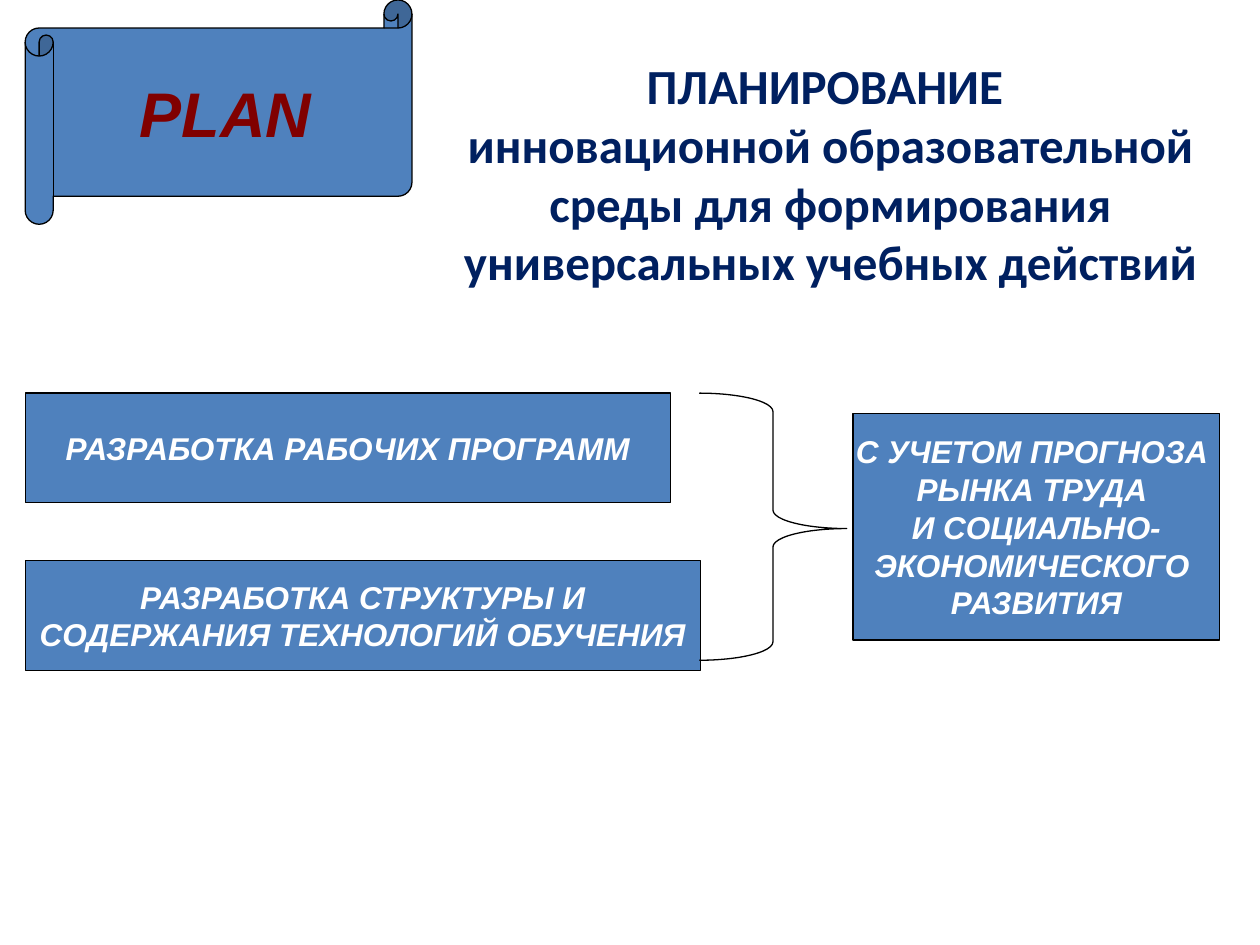
from pptx import Presentation
from pptx.dml.color import RGBColor
from pptx.enum.shapes import MSO_SHAPE as Shape
from pptx.enum.text import MSO_ANCHOR as Anchor, MSO_AUTO_SIZE as AutoSize, PP_ALIGN as Align
from pptx.util import Inches, Pt

WIDTH, HEIGHT = 10, 7.5
LEFT = 0.2
TASK_TOP = 3.12
COLORS = {"fill": "4F81BD", "line": "000000", "title": "002060",
          "plan": "800000", "light": "FFFFFF"}


def color(name):
    return RGBColor.from_string(COLORS[name])


def write(frame, text, size, font_name, color_name, italic=True):
    frame.text = text
    for para in frame.paragraphs:
        para.alignment = Align.CENTER
        for span in para.runs:
            font = span.font
            font.name, font.size = font_name, Pt(size)
            font.bold, font.italic = True, italic
            font.color.rgb = color(color_name)


def add_outline(page, kind, left, top, width, height):
    """Add an unfilled preset shape with a thin black line."""
    shape = page.shapes.add_shape(kind, *map(Inches, (left, top, width, height)))
    shape.shadow.inherit = False
    shape.fill.background()
    shape.line.color.rgb = color("line")
    shape.line.width = Pt(0.75)
    return shape


def add_panel(page, kind, place, text, size=18, color_name="light"):
    panel = add_outline(page, kind, *place)
    panel.fill.solid()
    panel.fill.fore_color.rgb = color("fill")
    frame = panel.text_frame
    frame.word_wrap = False
    frame.vertical_anchor = Anchor.MIDDLE
    write(frame, text, size, "Arial", color_name)


def add_title(page, text):
    title = page.shapes.title
    title.left, title.top = Inches(3.12), Inches(0.39)
    title.width, title.height = Inches(6.56), Inches(1.88)
    frame = title.text_frame
    frame.word_wrap = True
    frame.auto_size = AutoSize.NONE
    frame.vertical_anchor = Anchor.TOP
    frame.margin_left = Inches(0.48)
    write(frame, text, 28, "Calibri", "title", italic=False)


def add_brace(page, place):
    brace = add_outline(page, Shape.RIGHT_BRACE, *place)
    brace.adjustments[0] = 0.125
    brace.adjustments[1] = 0.507


def main():
    deck = Presentation()
    deck.slide_width, deck.slide_height = Inches(WIDTH), Inches(HEIGHT)
    page = deck.slides.add_slide(deck.slide_layouts[5])

    add_title(page, "ПЛАНИРОВАНИЕ \vинновационной образовательной среды "
                    "для формирования универсальных учебных действий")
    add_panel(page, Shape.HORIZONTAL_SCROLL, (LEFT, 0, 3.07, 1.78), "PLAN", 36, "plan")

    tasks = [
        (5.12, "РАЗРАБОТКА РАБОЧИХ ПРОГРАММ"),
        (5.36, "РАЗРАБОТКА СТРУКТУРЫ И\nСОДЕРЖАНИЯ ТЕХНОЛОГИЙ ОБУЧЕНИЯ"),
    ]
    for row, (width, text) in enumerate(tasks):
        place = (LEFT, TASK_TOP + row * 1.33, width, 0.87)
        add_panel(page, Shape.RECTANGLE, place, text)

    add_brace(page, (5.55, TASK_TOP, 1.17, 2.12))
    add_panel(page, Shape.RECTANGLE, (6.77, 3.28, 2.91, 1.8),
              "С УЧЕТОМ ПРОГНОЗА \nРЫНКА ТРУДА \nИ СОЦИАЛЬНО-\n"
              "ЭКОНОМИЧЕСКОГО \nРАЗВИТИЯ")
    deck.save("out.pptx")


if __name__ == "__main__":
    main()
